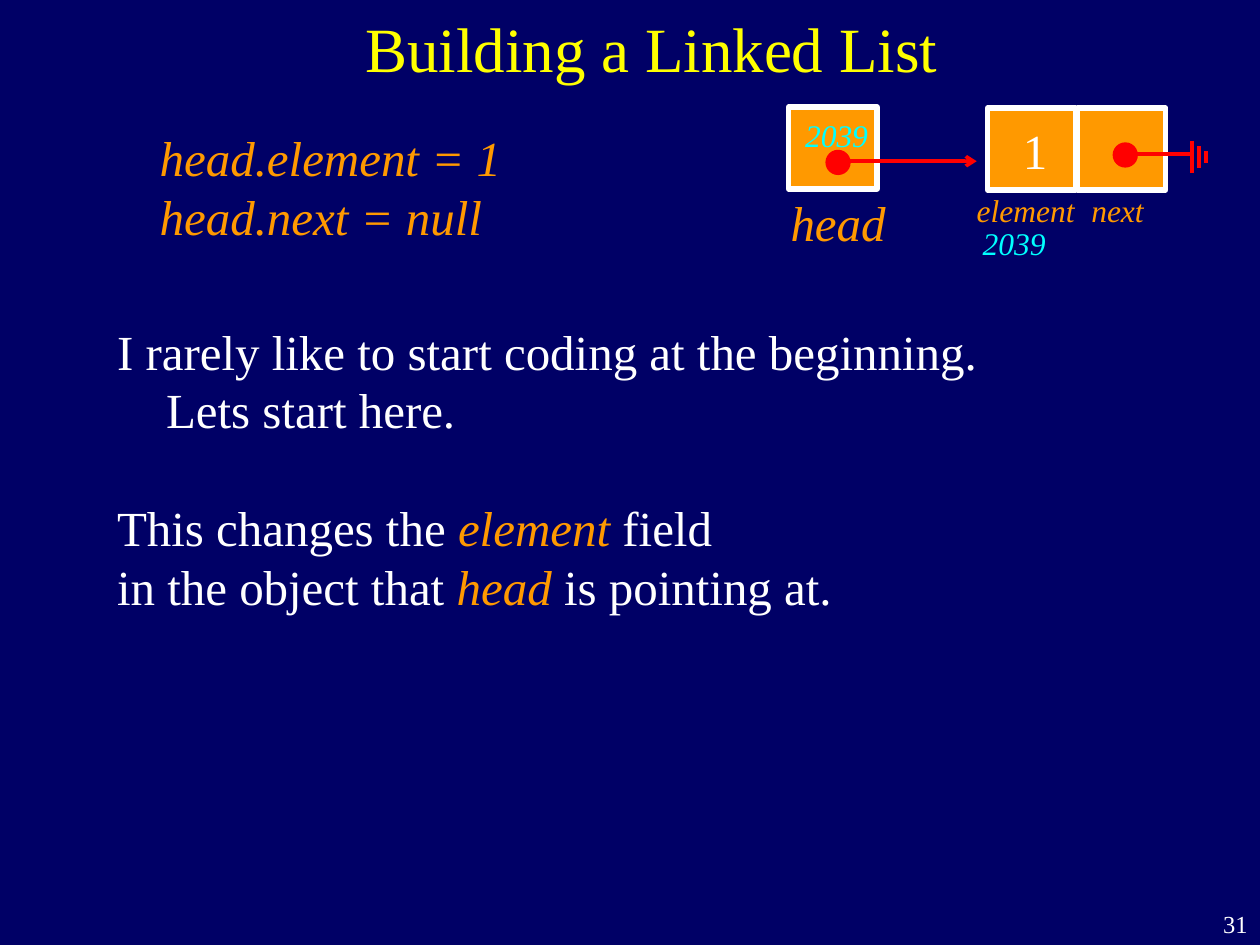
"""Build the linked list slide: code, node diagram and explanation."""
from lxml.etree import SubElement
from pptx import Presentation
from pptx.dml.color import RGBColor
from pptx.enum.shapes import MSO_CONNECTOR, MSO_SHAPE
from pptx.enum.text import MSO_ANCHOR, PP_ALIGN
from pptx.oxml.ns import qn
from pptx.util import Cm, Pt

FONT = "Times New Roman"
COLORS = {
    "navy": "000066",
    "yellow": "FFFF00",
    "orange": "FF9900",
    "white": "FFFFFF",
    "cyan": "00FFFF",
    "red": "FF0000",
}

TITLE = ("Building a Linked List", (2.34, -0.64, 21.59, 3.18))
NUMBER = ("31", (24.13, 18.21, 1.27, 0.84))
CODE = (["head.element = 1", "head.next = null"], (2.97, 2.44, 9.09, 2.64))
NODE_VALUE = ("1", (20.37, 2.31, 1.42, 1.45))
HEAD = ("head", (15.37, 3.89, 3.05, 1.19))
LABELS = [
    ("element", "orange", (19.69, 3.86, 2.18, 0.76)),
    ("next", "orange", (22.0, 3.86, 1.07, 0.76)),
    ("2039", "cyan", (19.81, 4.52, 1.27, 0.76)),
    ("2039", "cyan", (16.23, 2.34, 1.3, 0.76)),
]
BODY_AT = (2.11, 6.35, 20.96, 6.25)
BODY = [
    {"runs": ["I rarely like to start coding at the beginning."]},
    {"runs": ["Lets start here."], "indent": 28},
    {
        "runs": ["This changes the ", "element", " field\vin the object that ", "head", " is pointing at."],
        "before": 33.5,
    },
]
TERMS = ("element", "head")

CELL_W, CELL_H = 1.78, 1.65
CELLS = [(15.9, 2.16), (19.91, 2.18), (21.72, 2.18)]
DOT = 0.51
DOTS = [(16.64, 3.02), (22.43, 2.87)]
POINTER = (16.94, 3.25, 19.69, 3.25)
NULL_WIRE = (22.73, 3.1, 24.0, 3.1)
GROUND_Y = 3.17
GROUND_BARS = [(24.03, 0.64), (24.17, 0.44), (24.31, 0.25)]


def rgb(name):
    return RGBColor.from_string(COLORS[name])


def style(p, size, color, italic=False):
    for r in p.runs:
        r.font.name = FONT
        r.font.size = Pt(size)
        r.font.italic = italic
        r.font.color.rgb = rgb(color)


def add_text(s, lines, at, size, color, italic=False, align=PP_ALIGN.LEFT, inset=True, wrap=True):
    tf = s.shapes.add_textbox(*map(Cm, at)).text_frame
    tf.word_wrap = wrap
    if not inset:
        tf.margin_left = tf.margin_right = tf.margin_top = tf.margin_bottom = 0
    tf.text = "\n".join(lines)
    for p in tf.paragraphs:
        p.alignment = align
        style(p, size, color, italic)
    return tf


def add_body(s):
    tf = add_text(s, [""] * len(BODY), BODY_AT, 28, "white")
    for p, item in zip(tf.paragraphs, BODY):
        p.space_before = Pt(item.get("before", 0))
        if "indent" in item:
            p._p.get_or_add_pPr().set("marL", str(Pt(item["indent"])))
        for i, text in enumerate(item["runs"]):
            for j, part in enumerate(text.split("\v")):
                if j:
                    p.add_line_break()
                p.add_run().text = part
        style(p, 28, "white")
        for r in p.runs:
            if r.text in TERMS:
                r.font.italic = True
                r.font.color.rgb = rgb("orange")


def add_shape(s, kind, at, fill, line=None):
    sp = s.shapes.add_shape(kind, *map(Cm, at))
    sp.shadow.inherit = False
    sp.fill.solid()
    sp.fill.fore_color.rgb = rgb(fill)
    if line:
        sp.line.color.rgb = rgb(line)
        sp.line.width = Pt(3)
    else:
        sp.line.fill.background()


def add_line(s, ends, arrow=False):
    c = s.shapes.add_connector(MSO_CONNECTOR.STRAIGHT, *map(Cm, ends))
    c.line.color.rgb = rgb("red")
    c.line.width = Pt(2)
    if arrow:
        SubElement(c.line._get_or_add_ln(), qn("a:tailEnd"), type="arrow")
    SubElement(c._element.spPr, qn("a:effectLst"))


def main():
    prs = Presentation()
    prs.slide_width, prs.slide_height = Cm(25.4), Cm(19.05)
    s = prs.slides.add_slide(prs.slide_layouts[6])
    s.background.fill.solid()
    s.background.fill.fore_color.rgb = rgb("navy")

    text, at = NUMBER
    add_text(s, [text], at, 14, "white", align=PP_ALIGN.RIGHT)
    text, at = TITLE
    tf = add_text(s, [text], at, 36, "yellow", align=PP_ALIGN.CENTER)
    tf.vertical_anchor = MSO_ANCHOR.MIDDLE

    for x, y in CELLS:
        add_shape(s, MSO_SHAPE.RECTANGLE, (x, y, CELL_W, CELL_H), "orange", "white")
    for text, color, at in LABELS:
        add_text(s, [text], at, 18, color, italic=True, inset=False, wrap=False)
    text, at = HEAD
    add_text(s, [text], at, 28, "orange", italic=True, align=PP_ALIGN.CENTER, inset=False)
    text, at = NODE_VALUE
    add_text(s, [text], at, 28, "white")

    add_line(s, POINTER, arrow=True)
    add_line(s, NULL_WIRE)
    for x, h in GROUND_BARS:
        add_line(s, (x, GROUND_Y - h / 2, x, GROUND_Y + h / 2))
    for x, y in DOTS:
        add_shape(s, MSO_SHAPE.OVAL, (x, y, DOT, DOT), "red")

    lines, at = CODE
    add_text(s, lines, at, 28, "orange", italic=True)
    add_body(s)
    prs.save("out.pptx")


if __name__ == "__main__":
    main()
